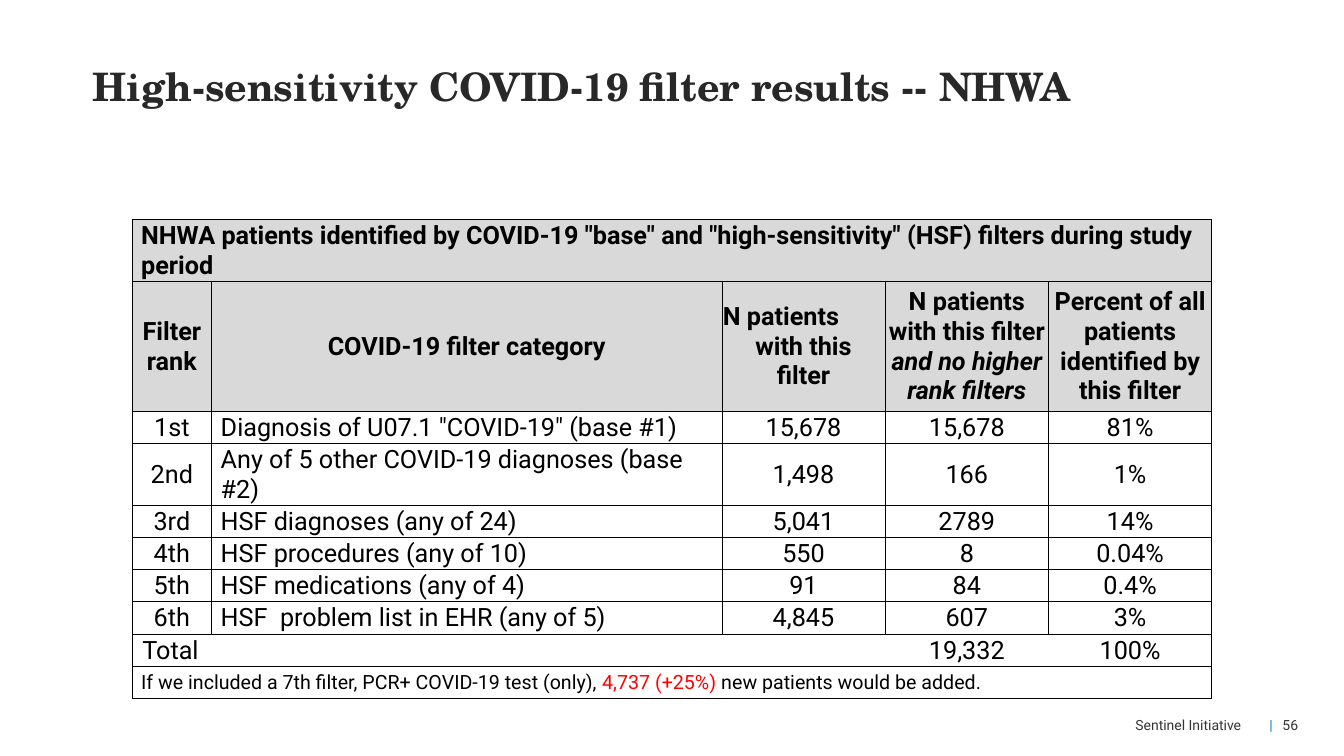
"""Build the slide with the COVID-19 filter results table."""
from lxml.etree import SubElement
from pptx import Presentation
from pptx.dml.color import RGBColor
from pptx.enum.text import MSO_ANCHOR, PP_ALIGN
from pptx.oxml.ns import qn
from pptx.util import Pt

PX = 9144
BLACK = RGBColor(0x00, 0x00, 0x00)
INK = RGBColor(0x28, 0x28, 0x28)
SLATE = RGBColor(0x34, 0x34, 0x34)
BLUE = RGBColor(0x00, 0x7C, 0xBA)
RED = RGBColor(0xFF, 0x00, 0x00)
GREY = RGBColor(0xD9, 0xD9, 0xD9)
LEFT, MID, RIGHT = PP_ALIGN.LEFT, PP_ALIGN.CENTER, PP_ALIGN.RIGHT

HEADS = [
    "Filter rank",
    "COVID-19 filter category",
    "N patients\nwith this\nfilter",
    [("N patients with this filter ", {}),
     ("and no higher rank filters", {"italic": True})],
    "Percent of all patients identified by this filter",
]
ROWS = [
    ["1st", 'Diagnosis of U07.1 "COVID-19" (base #1)', "15,678", "15,678", "81%"],
    ["2nd", "Any of 5 other COVID-19 diagnoses (base #2)", "1,498", "166", "1%"],
    ["3rd", "HSF diagnoses (any of 24)", "5,041", "2789", "14%"],
    ["4th", "HSF procedures (any of 10)", "550", "8", "0.04%"],
    ["5th", "HSF medications (any of 4)", "91", "84", "0.4%"],
    ["6th", "HSF  problem list in EHR (any of 5)", "4,845", "607", "3%"],
]
TOTAL = ["Total", "", "", "19,332", "100%"]
NOTE = [
    ("If we included a 7th filter, PCR+ COVID-19 test (only), ", {}),
    ("4,737 (+25%)", {"color": RED}),
    (" new patients would be added.", {}),
]


def write(frame, text, align=LEFT, tab=None, **style):
    """Fill a frame with a string, or with runs that override the style."""
    lines = text.split("\n") if isinstance(text, str) else [text]
    for i, line in enumerate(lines):
        para = frame.paragraphs[0] if i == 0 else frame.add_paragraph()
        para.alignment = align
        if tab:
            stops = SubElement(para._p.get_or_add_pPr(), qn("a:tabLst"))
            SubElement(stops, qn("a:tab"), pos=str(tab * PX), algn="l")
        for part, extra in [(line, {})] if isinstance(line, str) else line:
            run = para.add_run()
            run.text = part
            look = {**style, **extra}
            run.font.name = look.get("font", "Roboto")
            run.font.size = Pt(look.get("size", 18))
            run.font.bold = look.get("bold", False)
            run.font.italic = look.get("italic", False)
            run.font.color.rgb = look.get("color", BLACK)


class Deck:
    """Hold the style and the current slide."""

    def __init__(self, wide, high):
        """Start a deck with one titled slide."""
        self.show = Presentation()
        self.show.slide_width, self.show.slide_height = wide * PX, high * PX
        self.slide = self.show.slides.add_slide(self.show.slide_layouts[5])

    def inset(self, item, left, top, right, low):
        """Set the four margins of a frame or cell."""
        item.margin_left, item.margin_top = left * PX, top * PX
        item.margin_right, item.margin_bottom = right * PX, low * PX

    def title(self, text, x, y, w, h):
        """Place and fill the title."""
        shape = self.slide.shapes.title
        shape.left, shape.top, shape.width, shape.height = (n * PX for n in (x, y, w, h))
        frame = shape.text_frame
        frame.word_wrap = True
        frame.vertical_anchor = MSO_ANCHOR.BOTTOM
        self.inset(frame, 0, 0, 0, 0)
        write(frame, text, font="TeX Gyre Schola", size=28, bold=True, color=INK)

    def label(self, text, x, y, w, h, left=10, **style):
        """Add a small footer text box."""
        box = self.slide.shapes.add_textbox(*(n * PX for n in (x, y, w, h)))
        frame = box.text_frame
        frame.word_wrap = True
        frame.vertical_anchor = MSO_ANCHOR.MIDDLE
        self.inset(frame, left, 10, 0, 10)
        write(frame, text, size=10, color=SLATE, **style)

    def grid(self, x, y, cols, rows):
        """Add a bare table with the given column and row sizes."""
        frame = self.slide.shapes.add_table(
            len(rows), len(cols), x * PX, y * PX, sum(cols) * PX, sum(rows) * PX)
        table = frame.table
        table.first_row = table.horz_banding = False
        for col, wide in zip(table.columns, cols):
            col.width = wide * PX
        for row, high in zip(table.rows, rows):
            row.height = high * PX
        return table

    def cell(self, cell, text="", sides="LRTB", fill=None, left=1, right=1, **style):
        """Format one cell and draw the named sides."""
        self.inset(cell, left, 1, right, 0)
        cell.vertical_anchor = MSO_ANCHOR.MIDDLE
        props = cell._tc.get_or_add_tcPr()
        for side in "LRTB":
            line = SubElement(props, qn(f"a:ln{side}"), w=str(Pt(0.5)))
            if side in sides:
                paint = SubElement(line, qn("a:solidFill"))
                SubElement(paint, qn("a:srgbClr"), val=str(BLACK))
            else:
                SubElement(line, qn("a:noFill"))
        if fill is None:
            cell.fill.background()
        else:
            cell.fill.solid()
            cell.fill.fore_color.rgb = fill
        if text:
            write(cell.text_frame, text, **style)

    def band(self, table, row, text, **style):
        """Merge a whole row into one cell."""
        cells = list(table.rows[row].cells)
        cells[0].merge(cells[-1])
        self.cell(cells[0], text, left=9, **style)
        for cell in cells[1:]:
            self.cell(cell)


def main():
    """Draw the slide and save it."""
    deck = Deck(1333, 750)
    deck.title("High-sensitivity COVID-19 filter results -- NHWA", 92, 33, 1150, 76)
    deck.label("Sentinel Initiative", 911, 701, 320, 37, align=RIGHT)
    deck.label([("|", {"color": BLUE}), ("\t56", {})], 1231, 701, 57, 37,
               left=28, tab=13)

    table = deck.grid(131, 218, [79, 506] + [162] * 3, [51, 129] + [32] * 8)
    deck.band(table, 0, 'NHWA patients identified by COVID-19 "base" and '
              '"high-sensitivity" (HSF) filters during study period',
              fill=GREY, bold=True)
    for col, text in enumerate(HEADS):
        deck.cell(table.cell(1, col), text, fill=GREY, bold=True, align=MID)
    table.cell(1, 2).text_frame.paragraphs[0].alignment = LEFT
    for row, texts in enumerate(ROWS, 2):
        for col, text in enumerate(texts):
            name = col == 1
            deck.cell(table.cell(row, col), text, left=9 if name else 1,
                      align=LEFT if name else MID)
    for col, text in enumerate(TOTAL):
        first = col == 0
        edge = {0: "LTB", 4: "TBR"}.get(col, "TB")
        deck.cell(table.cell(8, col), text, sides=edge,
                  right=13 if first else 1, align=RIGHT if first else MID)
    deck.band(table, 9, NOTE, size=14)
    deck.show.save("out.pptx")


if __name__ == "__main__":
    main()
